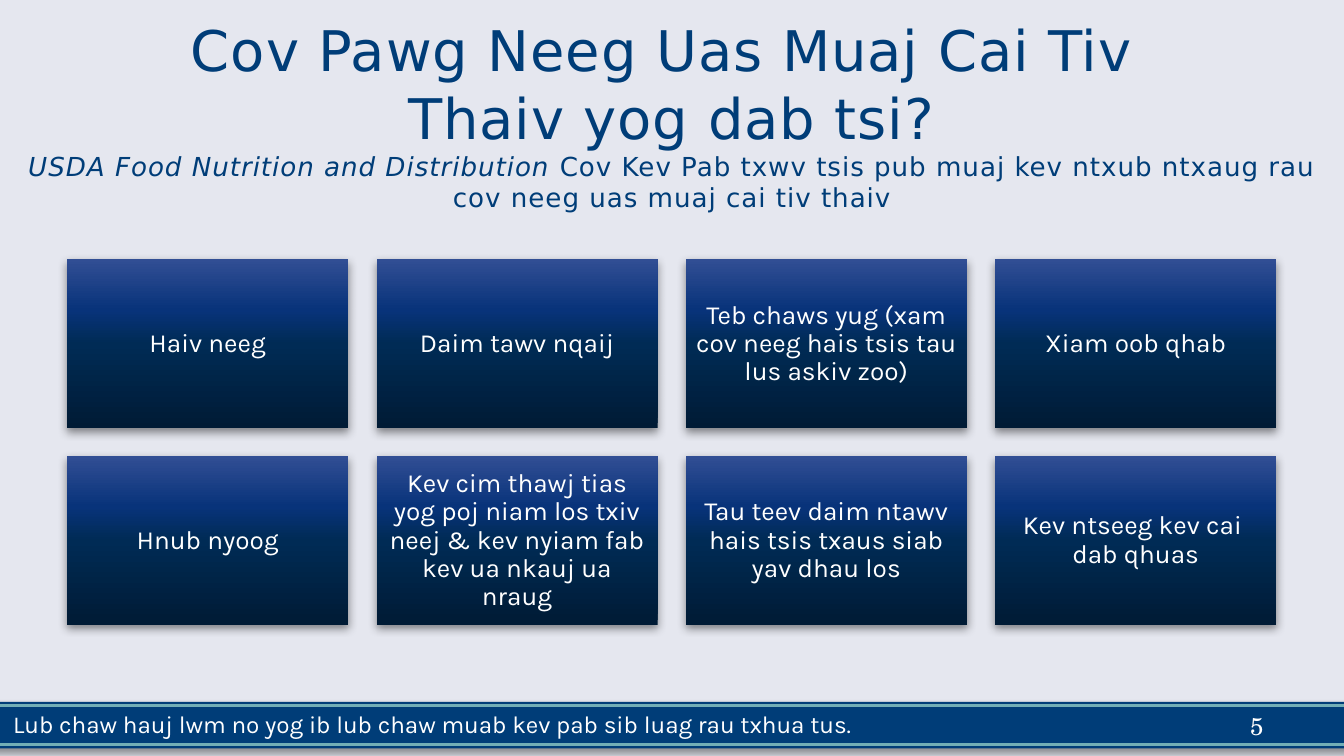
from lxml.etree import SubElement
from pptx import Presentation
from pptx.dml.color import RGBColor
from pptx.enum.shapes import MSO_CONNECTOR, MSO_SHAPE
from pptx.enum.text import MSO_ANCHOR, PP_ALIGN
from pptx.oxml.ns import qn
from pptx.util import Pt

NAVY, TEAL, WHITE = "003D78", "72AEB6", "FFFFFF"
GRADIENT = [(0, "001B35"), (50, "002B55"), (70, "08337A"), (100, "314E94")]
GROUNDS = [
    "Haiv neeg",
    "Daim tawv nqaij",
    "Teb chaws yug (xam cov neeg hais tsis tau lus askiv zoo)",
    "Xiam oob qhab",
    "Hnub nyoog",
    "Kev cim thawj tias yog poj niam los txiv neej & kev nyiam fab kev ua nkauj ua nraug",
    "Tau teev daim ntawv hais tsis txaus siab yav dhau los",
    "Kev ntseeg kev cai \ndab qhuas",
]


def rgb(color):
    return RGBColor.from_string(color)


def add_shadow(sp, alpha, blur, dist, angle):
    """Give the shape a black outer shadow (percent, points, points, degrees)."""
    sp.shadow.inherit = False
    effects = sp._element.spPr.find(qn("a:effectLst"))
    shadow = SubElement(effects, qn("a:outerShdw"), blurRad=str(Pt(blur)),
                        dist=str(Pt(dist)), dir=str(angle * 60000), rotWithShape="0")
    black = SubElement(shadow, qn("a:srgbClr"), val="000000")
    SubElement(black, qn("a:alpha"), val=str(alpha * 1000))


prs = Presentation()
prs.slide_width, prs.slide_height = Pt(720), Pt(405)
s = prs.slides.add_slide(prs.slide_layouts[6])
s.background.fill.solid()
s.background.fill.fore_color.rgb = rgb("E5E7EF")

# Footer band
band = s.shapes.add_shape(MSO_SHAPE.RECTANGLE, Pt(-7.2), Pt(376), Pt(734.4), Pt(25))
band.fill.solid()
band.fill.fore_color.rgb = rgb(NAVY)
band.line.fill.background()
add_shadow(band, 40, 4, 3, 45)
for y in (378, 399):
    line = s.shapes.add_connector(MSO_CONNECTOR.STRAIGHT, Pt(-7.2), Pt(y), Pt(727.2), Pt(y))
    line.line.color.rgb = rgb(TEAL)
    line.line.width = Pt(1.5)
    SubElement(line._element.spPr, qn("a:effectLst"))

footer = "Lub chaw hauj lwm no yog ib lub chaw muab kev pab sib luag rau txhua tus."
for text, x, y, w, h, font, align, anchor in (
    (footer, 0, 376.6, 648, 23, "Karla", PP_ALIGN.LEFT, MSO_ANCHOR.TOP),
    ("5", 516, 378, 168, 21.6, "TeX Gyre Schola", PP_ALIGN.RIGHT, MSO_ANCHOR.MIDDLE),
):
    tf = s.shapes.add_textbox(Pt(x), Pt(y), Pt(w), Pt(h)).text_frame
    tf.word_wrap = True
    tf.vertical_anchor = anchor
    p = tf.paragraphs[0]
    p.text = text
    p.alignment = align
    p.font.size = Pt(13)
    p.font.name = font
    p.font.color.rgb = rgb(WHITE)

# Grid of protected grounds
for i, text in enumerate(GROUNDS):
    row, col = divmod(i, 4)
    sp = s.shapes.add_shape(MSO_SHAPE.RECTANGLE, Pt(36 + col * 165.7), Pt(139 + row * 105.4),
                            Pt(150.6), Pt(90.4))
    sp.fill.gradient()
    sp.fill.gradient_angle = 90
    stops = sp._element.spPr.find(".//" + qn("a:gsLst"))
    stops.clear()
    for pos, color in GRADIENT:
        stop = SubElement(stops, qn("a:gs"), pos=str(pos * 1000))
        SubElement(stop, qn("a:srgbClr"), val=color)
    sp.line.fill.background()
    add_shadow(sp, 43, 5, 2, 90)
    tf = sp.text_frame
    tf.word_wrap = True
    tf.vertical_anchor = MSO_ANCHOR.MIDDLE
    tf.margin_left = tf.margin_right = tf.margin_top = tf.margin_bottom = Pt(4.2)
    p = tf.paragraphs[0]
    p.text = text
    p.alignment = PP_ALIGN.CENTER
    p.line_spacing = 0.9
    for r in p.runs:
        r.font.size = Pt(14)
        r.font.name = "Karla"
        r.font.color.rgb = rgb(WHITE)

# Title and subtitle
tf = s.shapes.add_textbox(Pt(5.8), Pt(6.5), Pt(708.5), Pt(108.7)).text_frame
tf.word_wrap = True
tf.vertical_anchor = MSO_ANCHOR.MIDDLE
tf.margin_left = tf.margin_right = tf.margin_bottom = 0
tf.margin_top = Pt(0.95)
p = tf.paragraphs[0]
p.text = "Cov Pawg Neeg Uas Muaj Cai Tiv \nThaiv yog dab tsi?\n"
p.alignment = PP_ALIGN.CENTER
p.space_before = Pt(1)
for r in p.runs:
    r.font.size = Pt(30)
for text, italic in (
    ("USDA Food Nutrition and Distribution ", True),
    ("Cov Kev Pab txwv tsis pub muaj kev ntxub ntxaug rau cov neeg uas muaj cai tiv thaiv", False),
):
    r = p.add_run()
    r.text = text
    r.font.size = Pt(14)
    r.font.italic = italic
for r in p.runs:
    r.font.name = "DejaVu Sans"
    r.font.color.rgb = rgb(NAVY)
    r.font._element.set("spc", "50")

prs.save("out.pptx")
